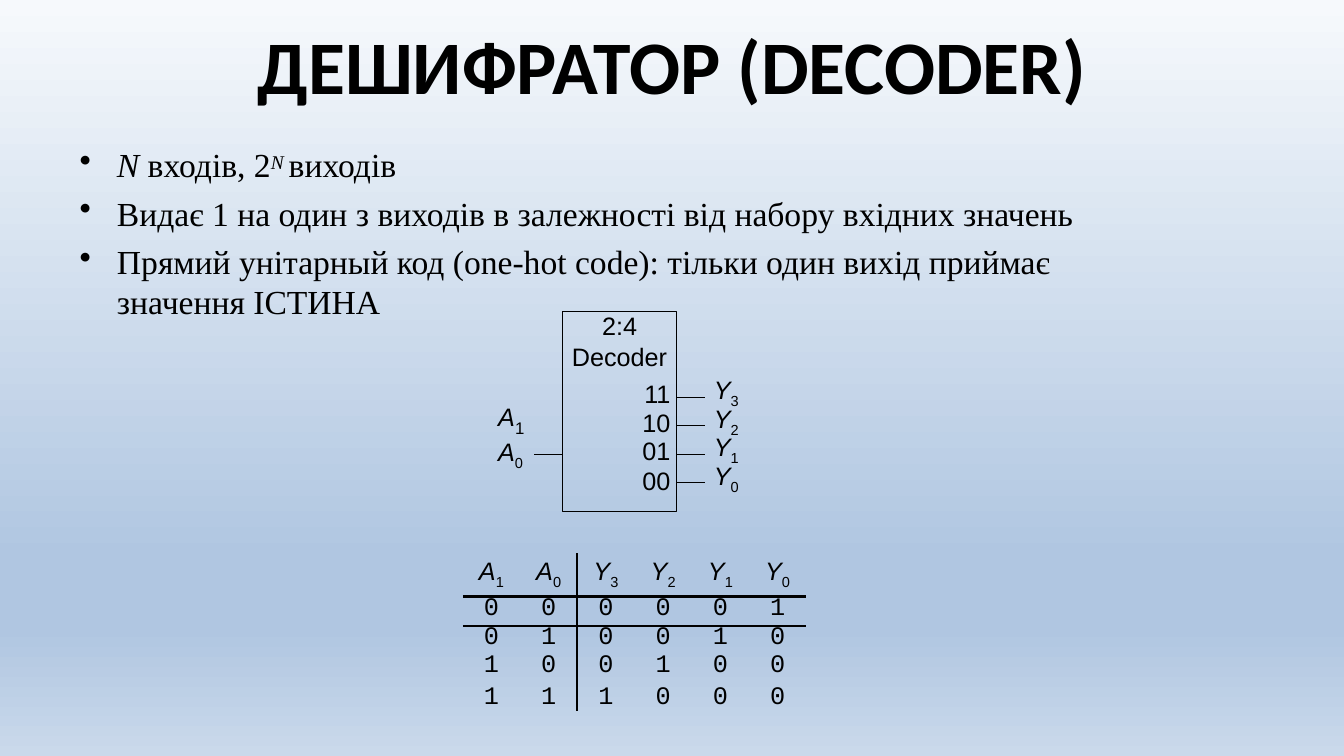
from lxml import etree
from pptx import Presentation
from pptx import util as u
from pptx.dml.color import RGBColor
from pptx.enum import shapes, text
from pptx.oxml import ns

BLACK = RGBColor(0, 0, 0)
BACKDROP = [(0, RGBColor(0xF6, 0xF9, 0xFC)), (74, RGBColor(0xB0, 0xC6, 0xE1)),
            (83, RGBColor(0xB0, 0xC6, 0xE1)), (100, RGBColor(0xCA, 0xD9, 0xEB))]
NO_GRID_STYLE = "{2D5ABB26-0587-4C30-8999-92F81FD0307C}"
WIDTH, HEIGHT = 13.33, 7.5
LEFT, CENTER, RIGHT = text.PP_ALIGN.LEFT, text.PP_ALIGN.CENTER, text.PP_ALIGN.RIGHT

# Grid of the decoder symbol and of the truth table
BOX_LEFT, BOX_TOP, BOX_W, BOX_H = 5.58, 3.09, 1.13, 1.98
PIN_TOP, PIN_STEP, PIN_LEN = 3.94, 0.283, 0.28
TABLE_LEFT, TABLE_TOP, COL_W = 4.59, 5.49, 0.568
ROW_HEIGHTS = [0.43, 0.29, 0.28, 0.34]
LAST_ROW_TOP = 6.76

HEADERS = ["A1", "A0", "Y3", "Y2", "Y1", "Y0"]
TRUTH = ["000001", "010010", "100100", "111000"]
# Each run is (text, italic, baseline in percent)
BULLETS = [
    [("N ", True, 0), ("входів, 2", False, 0), ("N ", True, 24), ("виходів", False, 0)],
    [("Видає 1 на один з виходів в залежності від набору вхідних значень", False, 0)],
    [("Прямий унітарный код (one-hot code): тільки один вихід приймає "
      "значення ІСТИНА", False, 0)],
]


def set_background(s):
    s.background.fill.gradient()
    s.background.fill.gradient_angle = 270
    stops = s.element.find(".//" + ns.qn("a:gsLst"))
    for stop in list(stops):
        stops.remove(stop)
    for percent, color in BACKDROP:
        gs = etree.SubElement(stops, ns.qn("a:gs"), pos=str(percent * 1000))
        etree.SubElement(gs, ns.qn("a:srgbClr"), val=str(color))


def set_frame(tf, top=0.0, left=0.0, right=0.0):
    tf.margin_left, tf.margin_top = u.Inches(left), u.Inches(top)
    tf.margin_right, tf.margin_bottom = u.Inches(right), 0
    tf.vertical_anchor = text.MSO_ANCHOR.TOP
    tf.word_wrap = True


def write(p, runs, size=18, font="Arial", align=LEFT, before=0.0, line=None):
    p.font.size, p.font.name = u.Pt(size), font
    p.font.color.rgb = BLACK
    p.alignment = align
    p.space_before = u.Pt(before)
    if line:
        p.line_spacing = u.Pt(line)
    for words, italic, baseline in runs:
        r = p.add_run()
        r.text = words
        if italic:
            r.font.italic = True
        if baseline:
            r.font._element.set("baseline", str(baseline * 1000))


def plain(words):
    return [(words, False, 0)]


def signal(name):
    return [(name[0], True, 0), (name[1:], False, -28)]


def paragraphs(tf, count):
    return [tf.paragraphs[0]] + [tf.add_paragraph() for _ in range(count - 1)]


def add_label(s, left, top, width, height, runs, inset=0.0, **style):
    tf = s.shapes.add_textbox(*map(u.Inches, (left, top, width, height))).text_frame
    set_frame(tf, inset)
    write(tf.paragraphs[0], runs, **style)


def add_line(s, x1, y1, x2, y2, weight=0.54):
    sp = s.shapes.add_connector(shapes.MSO_CONNECTOR.STRAIGHT,
                                *map(u.Inches, (x1, y1, x2, y2)))
    sp.line.color.rgb = BLACK
    sp.line.width = u.Pt(weight)
    etree.SubElement(sp.element.spPr, ns.qn("a:effectLst"))


def add_title(s):
    title = s.shapes.title
    title.left, title.top = 0, u.Inches(0.18)
    title.width, title.height = u.Inches(WIDTH), u.Inches(0.92)
    set_frame(title.text_frame, 0.01)
    p = title.text_frame.paragraphs[0]
    write(p, plain("ДЕШИФРАТОР (DECODER)"), 54, "Calibri", CENTER, 1)
    p.font.bold = True


def add_bullets(s):
    tf = s.shapes.add_textbox(*map(u.Inches, (0.74, 1.34, 9.97, 1.87))).text_frame
    set_frame(tf, 0.09)
    for i, (p, runs) in enumerate(zip(paragraphs(tf, len(BULLETS)), BULLETS)):
        write(p, runs, 24, "Times New Roman", before=5.8 if i else 6.8)
        pPr = p._p.get_or_add_pPr()
        pPr.set("marL", str(u.Inches(0.42)))
        pPr.set("indent", str(u.Inches(-0.37)))
        bullet = etree.Element(ns.qn("a:buChar"), char="•")
        pPr.find(ns.qn("a:defRPr")).addprevious(bullet)


def add_decoder(s):
    # Pins
    right = BOX_LEFT + BOX_W
    for i in range(4):
        y = PIN_TOP + i * PIN_STEP
        add_line(s, right, y, right + PIN_LEN, y)
    y = PIN_TOP + 2 * PIN_STEP
    add_line(s, BOX_LEFT - PIN_LEN, y, BOX_LEFT, y)

    # Inputs
    add_label(s, 4.94, 3.96, 0.66, 0.33, [("A", True, 0)], 0.02, before=1.2)
    add_label(s, 5.11, 4.13, 0.12, 0.23, plain("1"), 0.01, size=12, before=0.9)
    add_label(s, 4.94, 4.31, 0.35, 0.33, signal("A0"), 0.02, before=1.2)

    # Body with output codes
    sp = s.shapes.add_shape(shapes.MSO_SHAPE.RECTANGLE,
                            *map(u.Inches, (BOX_LEFT, BOX_TOP, BOX_W, BOX_H)))
    sp.shadow.inherit = False
    sp.fill.background()
    sp.line.color.rgb = BLACK
    sp.line.width = u.Pt(0.54)
    set_frame(sp.text_frame, right=0.06, left=0.06)
    rows = [("2:4", CENTER, 0, 21), ("Decoder", CENTER, 0.1, None), ("11", RIGHT, 5.9, 21),
            ("10", RIGHT, 0, 20.4), ("01", RIGHT, 0, 20.4), ("00", RIGHT, 0, 21)]
    for p, (words, align, before, line) in zip(paragraphs(sp.text_frame, len(rows)), rows):
        write(p, plain(words), align=align, before=before, line=line)

    # Outputs
    tf = s.shapes.add_textbox(*map(u.Inches, (7.04, 3.74, 0.35, 1.18))).text_frame
    set_frame(tf, 0.04, 0.04)
    for i, (p, name) in enumerate(zip(paragraphs(tf, 4), HEADERS[2:])):
        write(p, signal(name), before=0 if i else 2.9, line=20.4)


def add_border(cell, side, weight):
    ln = etree.Element(ns.qn("a:" + side), w=str(u.Pt(weight)))
    fill = etree.SubElement(ln, ns.qn("a:solidFill"))
    etree.SubElement(fill, ns.qn("a:srgbClr"), val=str(BLACK))
    tcPr = cell._tc.get_or_add_tcPr()
    tcPr.find(ns.qn("a:noFill")).addprevious(ln)


def add_truth_table(s):
    cols = len(HEADERS)
    frame = s.shapes.add_table(len(ROW_HEIGHTS), cols, *map(
        u.Inches, (TABLE_LEFT, TABLE_TOP, cols * COL_W, sum(ROW_HEIGHTS))))
    table = frame.table
    table.first_row = table.horz_banding = False
    table._tbl.tblPr.find(ns.qn("a:tableStyleId")).text = NO_GRID_STYLE
    for column in table.columns:
        column.width = u.Inches(COL_W)
    for i, height in enumerate(ROW_HEIGHTS):
        table.rows[i].height = u.Inches(height)
        for j in range(cols):
            cell = table.cell(i, j)
            cell.margin_left = cell.margin_right = cell.margin_bottom = 0
            cell.margin_top = 0 if i else u.Inches(0.04)
            cell.fill.background()
            p = cell.text_frame.paragraphs[0]
            if i == 0:
                write(p, signal(HEADERS[j]), align=CENTER, before=3)
                add_border(cell, "lnB", 2.25)
            else:
                write(p, plain(TRUTH[i - 1][j]), 18, "Courier New", CENTER, line=18.8)
            if i == 1:
                add_border(cell, "lnT", 2.25)
                add_border(cell, "lnB", 1.5)

    # Divider between inputs and outputs, then the closing row of values
    x = TABLE_LEFT + 2 * COL_W
    add_line(s, x, TABLE_TOP, x, 7.05, 1.63)
    for j, digit in enumerate(TRUTH[-1]):
        left = TABLE_LEFT + (j + 0.5) * COL_W - 0.09
        add_label(s, left, LAST_ROW_TOP, 0.18, 0.32, plain(digit),
                  font="Courier New", align=CENTER, line=19.8)


def main():
    prs = Presentation()
    prs.slide_width, prs.slide_height = u.Inches(WIDTH), u.Inches(HEIGHT)
    s = prs.slides.add_slide(prs.slide_layouts[5])
    set_background(s)
    add_title(s)
    add_bullets(s)
    add_decoder(s)
    add_truth_table(s)
    prs.save("out.pptx")


if __name__ == "__main__":
    main()
